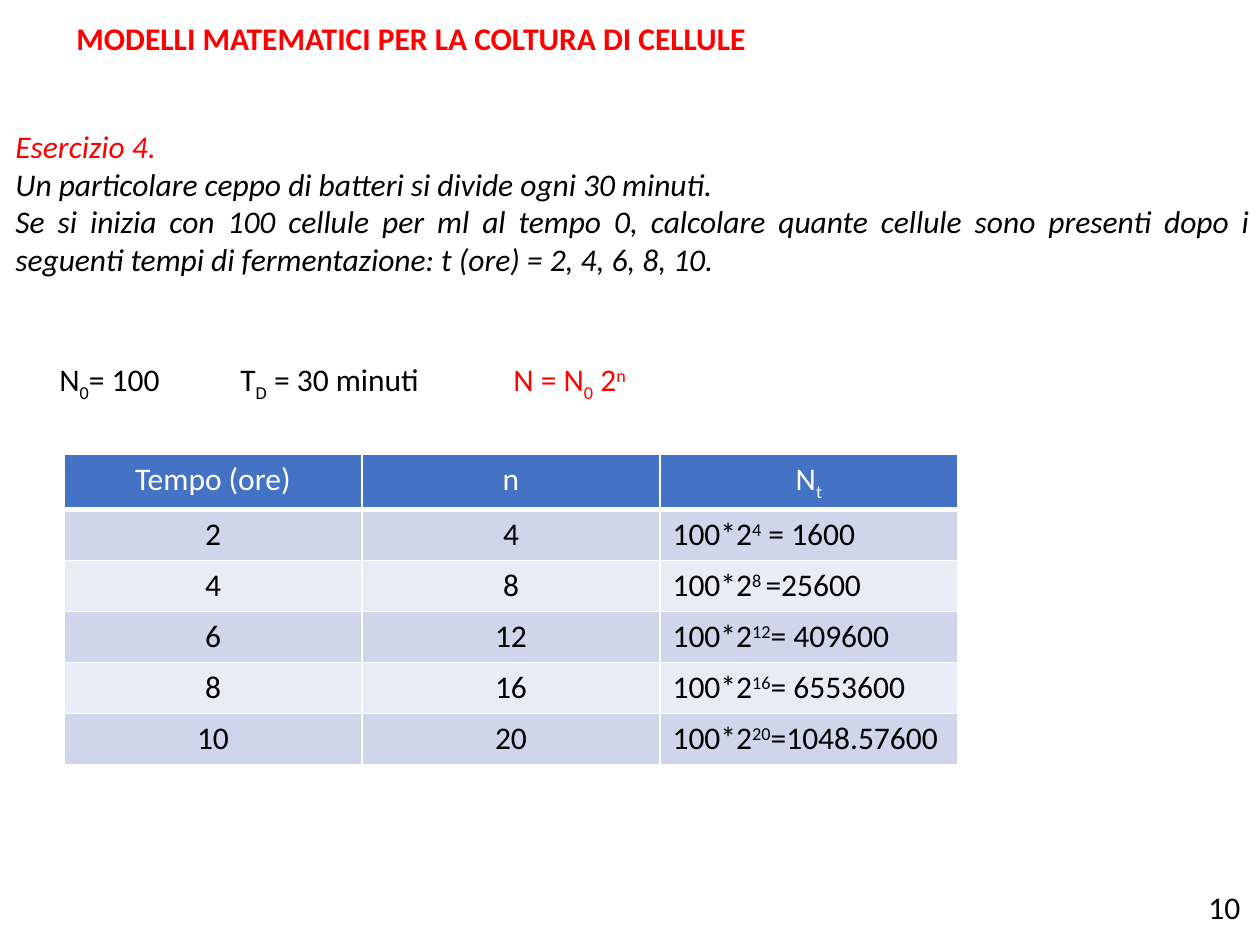
from dataclasses import dataclass

from lxml.etree import SubElement
from pptx import Presentation
from pptx.dml.color import RGBColor as Rgb
from pptx.enum.text import MSO_ANCHOR as Anchor, PP_ALIGN as Align
from pptx.oxml.ns import qn
from pptx.util import Pt


@dataclass(frozen=True)
class Theme:
    font: str = "Calibri"
    size: int = 18
    black: str = "000000"
    red: str = "FF0000"
    white: str = "FFFFFF"
    header: str = "4472C4"
    bands: tuple = ("CFD5EA", "E9EBF5")
    sub: int = -25
    sup: int = 30


theme = Theme()
EMU_PER_PX = 914400 / 126


def px(length):
    return round(length * EMU_PER_PX)


def write(paragraph, runs, color, align=Align.LEFT, bold=False, italic=False):
    """Add (text, baseline percent) runs to a paragraph."""
    paragraph.alignment = align
    for text, baseline in runs:
        run = paragraph.add_run()
        run.text = text
        run.font.name = theme.font
        run.font.size = Pt(theme.size)
        run.font.bold = bold
        run.font.italic = italic
        run.font.color.rgb = Rgb.from_string(color)
        if baseline:
            run.font._element.set("baseline", str(baseline * 1000))


deck = Presentation()
deck.slide_width, deck.slide_height = px(1260), px(945)
slide = deck.slides.add_slide(deck.slide_layouts[6])

# Title, page number and the given quantities
labels = [
    ((64, 13, 702, 50), [("MODELLI MATEMATICI PER LA COLTURA DI CELLULE", 0)],
     theme.red, True, False),
    ((1196, 882, 58, 50), [("10", 0)], theme.black, False, False),
    ((47, 354, 136, 77), [("N", 0), ("0", theme.sub), ("= 100", 0)],
     theme.black, False, False),
    ((228, 354, 638, 50), [("T", 0), ("D", theme.sub), (" = 30 minuti", 0)],
     theme.black, False, True),
    ((501, 354, 630, 50),
     [("N = N", 0), ("0", theme.sub), (" 2", 0), ("n", theme.sup)],
     theme.red, False, True),
]
for place, runs, color, bold, wrap in labels:
    label = slide.shapes.add_textbox(*map(px, place)).text_frame
    label.word_wrap = wrap
    write(label.paragraphs[0], runs, color, bold=bold)

# Exercise text
exercise = slide.shapes.add_textbox(px(3), px(120), px(1260), px(165)).text_frame
exercise.word_wrap = True
exercise.vertical_anchor = Anchor.MIDDLE
sentences = [
    ("Esercizio 4. ", theme.red),
    ("Un particolare ceppo di batteri si divide ogni 30 minuti. ", theme.black),
    ("Se si inizia con 100 cellule per ml al tempo 0, calcolare quante cellule "
     "sono presenti dopo i seguenti tempi di fermentazione: "
     "t (ore) = 2, 4, 6, 8, 10. ", theme.black),
]
for i, (sentence, color) in enumerate(sentences):
    paragraph = exercise.add_paragraph() if i else exercise.paragraphs[0]
    write(paragraph, [(sentence, 0)], color, Align.JUSTIFY, italic=True)

# Growth table: hours, divisions, cell count
rows = [[[("Tempo (ore)", 0)], [("n", 0)], [("N", 0), ("t", theme.sub)]]]
growth = [
    (2, "4", " = 1600"),
    (4, "8 ", "=25600"),
    (6, "12", "= 409600"),
    (8, "16", "= 6553600"),
    (10, "20", "=1048.57600"),
]
for hours, divisions, result in growth:
    rows.append([
        [(str(hours), 0)],
        [(divisions.strip(), 0)],
        [("100*2", 0), (divisions, theme.sup), (result, 0)],
    ])

table = slide.shapes.add_table(
    len(rows), 3, px(64), px(454), px(894), px(51 * len(rows))).table
for column in table.columns:
    column.width = px(298)
for r, row in enumerate(rows):
    table.rows[r].height = px(51)
    for c, runs in enumerate(row):
        cell = table.cell(r, c)
        # White borders, heavier under the header
        for side in ("lnL", "lnR", "lnT", "lnB"):
            width = 3 if r == 0 and side == "lnB" else 1
            border = SubElement(cell._tc.get_or_add_tcPr(), qn(f"a:{side}"),
                                w=str(Pt(width)))
            paint = SubElement(border, qn("a:solidFill"))
            SubElement(paint, qn("a:srgbClr"), val=theme.white)
        cell.fill.solid()
        cell.fill.fore_color.rgb = Rgb.from_string(
            theme.bands[(r - 1) % 2] if r else theme.header)
        write(cell.text_frame.paragraphs[0], runs,
              theme.black if r else theme.white,
              Align.LEFT if r and c == 2 else Align.CENTER)

deck.save("out.pptx")
